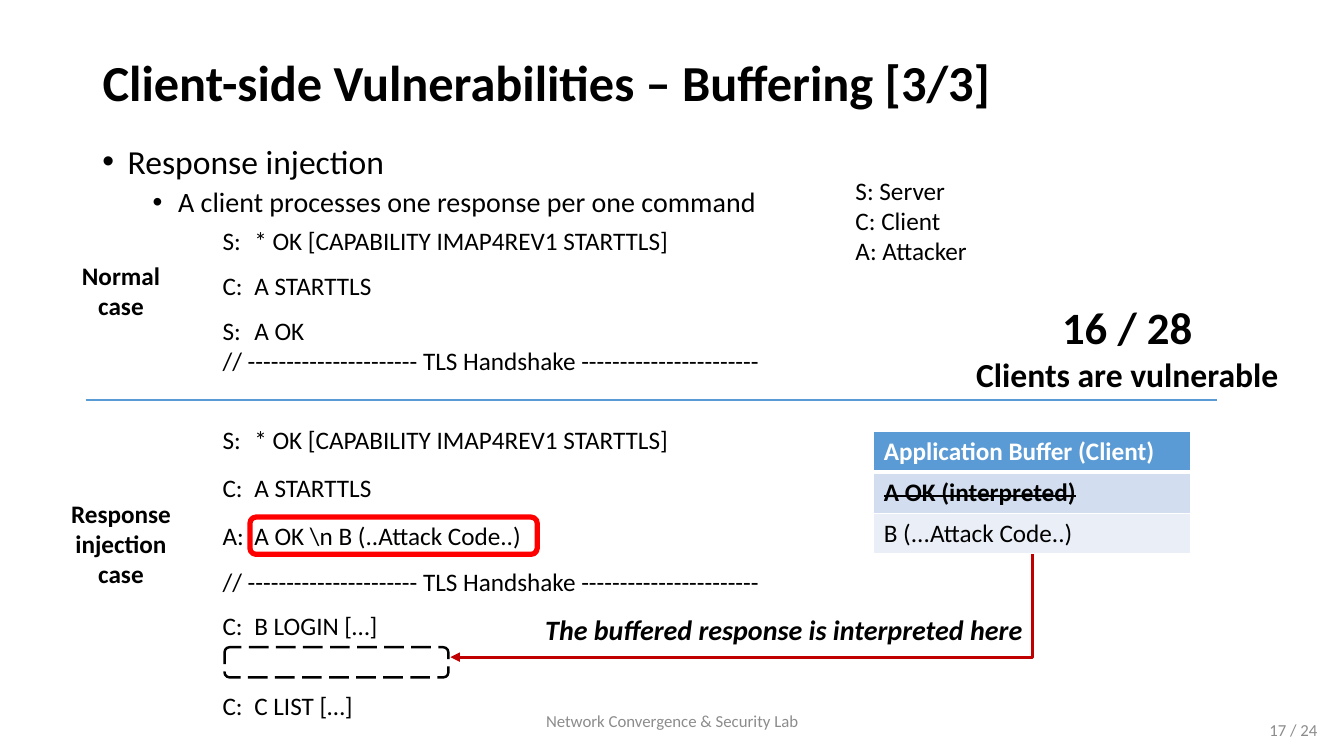
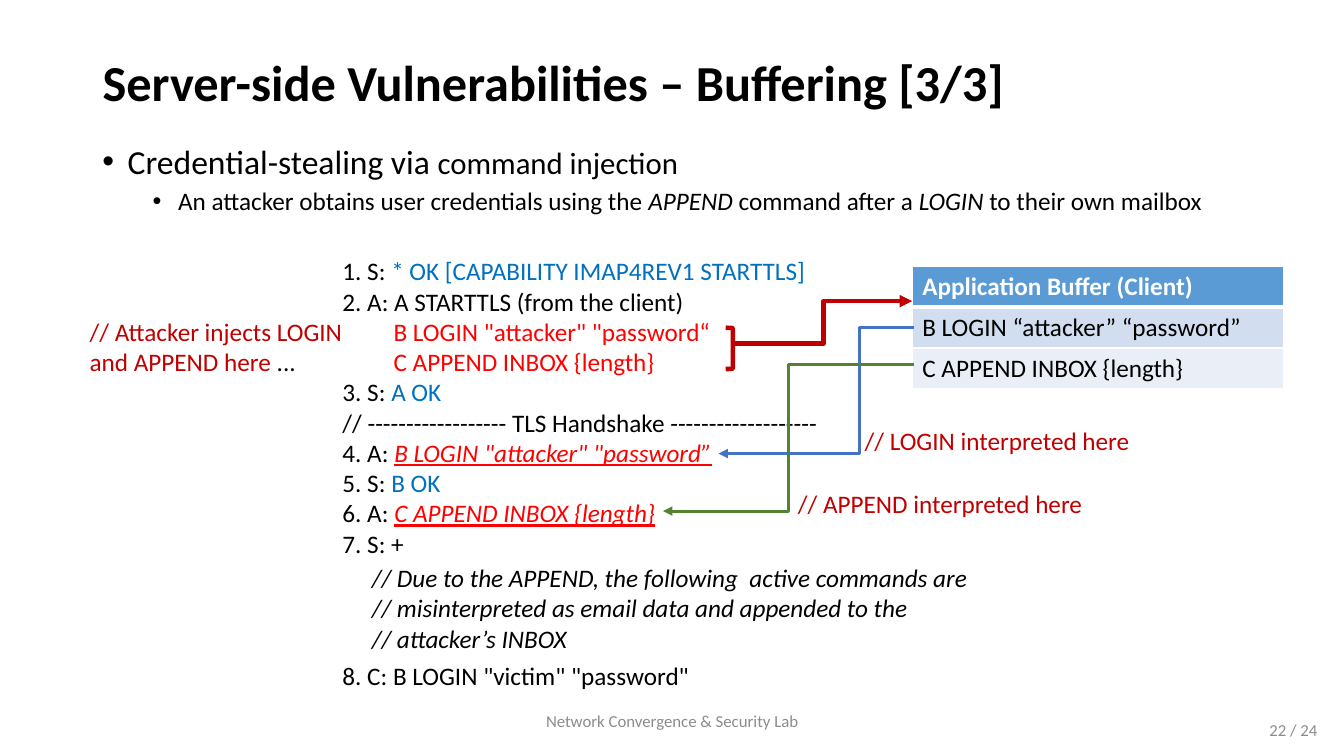
from lxml import etree
from pptx import Presentation
from pptx.dml.color import RGBColor
from pptx.enum.dml import MSO_LINE
from pptx.enum.shapes import MSO_CONNECTOR, MSO_SHAPE
from pptx.enum.text import MSO_ANCHOR, MSO_AUTO_SIZE, PP_ALIGN
from pptx.oxml.ns import qn
from pptx.util import Cm, Pt

FONT = "Calibri"
COLORS = {
    "black": "000000", "white": "FFFFFF", "gray": "8C8C8C",
    "red": "FF0000", "dark_red": "C00000", "text_blue": "0070C0",
    "arrow_blue": "4472C4", "green": "548235", "header": "5B9BD5",
    "band_dark": "D2DEEF", "band_light": "EAEFF7",
}
FOOTER = "Network Convergence & Security Lab"
PAGE_COUNT = 24
TITLE_BOX = (2.33, 1.01, 29.21, 2.25)
BODY_BOX = (2.33, 3.53, 29.21, 13.23)
FOOTER_BOX = (11.23, 17.65, 11.43, 1.01)
PAGE_BOX = (25.83, 17.88, 7.62, 1.01)
ROW_HEIGHT = 1.03
TAG_INDENT = 0.8
INJECT_INDENT = 1.29


def para(*runs, **layout):
    """Pair runs, each a string or (string, style), with paragraph layout."""
    return runs, layout


def tagged(text, before=0):
    """A protocol line whose text after the tab hangs at a fixed indent."""
    return para(text, before=before, indent=TAG_INDENT, hang=TAG_INDENT)


def bullet(*runs, indent, before):
    return para(*runs, indent=indent, hang=0.64, before=before, spacing=0.9, bullet=True)


BLUE = {"color": "text_blue"}
RED = {"color": "red"}
INJECTED = {"color": "red", "italic": True, "underline": True}
ITALIC = {"italic": True, "size": 18}
SMALL = {"size": 18}

GREETING = "S:\t* OK [CAPABILITY IMAP4REV1 STARTTLS]"
HANDSHAKE = "// ---------------------- TLS Handshake -----------------------"

CLIENT = {
    "title": "Client-side Vulnerabilities – Buffering [3/3]",
    "page": 17,
    "body": [
        bullet(("Response injection", {"size": 24}), indent=0.64, before=10),
        bullet(("A client processes one response per one command", {"size": 20}),
               indent=1.91, before=5),
    ],
    "texts": [
        ((22.96, 7.44, 10.9, 2.64),
         [para(("16 / 28", {"size": 32})), para("Clients are vulnerable")],
         {"size": 24, "bold": True, "align": PP_ALIGN.CENTER}),
        ((5.36, 5.56, 15.01, 4.45),
         [tagged(GREETING), tagged("C:\tA STARTTLS", 10),
          tagged("S:\tA OK", 11), tagged(HANDSHAKE)], {}),
        ((5.36, 10.57, 15.01, 7.77),
         [tagged(GREETING), tagged("C:\tA STARTTLS", 12.8),
          tagged("A:\tA OK \\n B (..Attack Code..)", 12.8), tagged(HANDSHAKE, 11),
          tagged("C:\tB LOGIN […]", 10), tagged("C:\tC LIST […]", 35.4)], {}),
        ((13.49, 15.31, 13.67, 1.11),
         [para("The buffered response is interpreted here")],
         {"size": 20, "bold": True, "italic": True}),
        ((21.31, 4.29, 3.51, 2.57),
         [para("S: Server"), para("C: Client"), para("A: Attacker")], {}),
        ((1.17, 6.43, 3.76, 1.8), [para("Normal"), para("case")],
         {"bold": True, "align": PP_ALIGN.CENTER}),
        ((1.17, 12.42, 3.76, 2.57),
         [para("Response"), para("injection"), para("case")],
         {"bold": True, "align": PP_ALIGN.CENTER}),
    ],
    "buffer": ((22.02, 10.87, 7.98),
               [("A OK (interpreted)", {"bold": True, "strike": True}),
                "B (...Attack Code..)"]),
}

SERVER = {
    "title": "Server-side Vulnerabilities – Buffering [3/3]",
    "page": 22,
    "body": [
        bullet(("Credential-stealing via ", {"size": 24}),
               ("command injection", {"size": 22}), indent=0.64, before=10),
        bullet(("An attacker obtains user credentials using the ", SMALL),
               ("APPEND", ITALIC), (" command after a ", SMALL), ("LOGIN", ITALIC),
               (" to their own mailbox", SMALL), indent=1.91, before=5),
    ],
    "texts": [
        ((8.38, 6.32, 21.16, 11.28), [
            para("1. S: ", ("* OK [CAPABILITY IMAP4REV1 STARTTLS]", BLUE)),
            para("2. A: A STARTTLS (from the client)"),
            para(('B LOGIN "attacker" "password“', RED), indent=INJECT_INDENT),
            para(("C APPEND INBOX {length}", RED), indent=INJECT_INDENT),
            para("3. S: ", ("A OK", BLUE)),
            para("// ------------------ TLS Handshake -------------------"),
            para("4. A: ", ('B LOGIN "attacker" "password”', INJECTED)),
            para("5. S: ", ("B OK", BLUE)),
            para("6. A: ", ("C APPEND INBOX {length}", INJECTED)),
            para("7. S: +"),
            para('8. C: B LOGIN "victim" "password"', before=73),
        ], {}),
        ((2.01, 7.85, 7.16, 1.8),
         [para("// Attacker injects LOGIN and APPEND here ", ("...", {"color": "black"}))],
         {"color": "dark_red"}),
        ((21.54, 10.59, 8.36, 1.01), [para("// LOGIN interpreted here")],
         {"color": "dark_red"}),
        ((19.86, 12.19, 8.36, 1.01), [para("// APPEND interpreted here")],
         {"color": "dark_red"}),
        ((9.12, 14.05, 17.35, 2.57),
         [para("// Due to the APPEND, the following  active commands are"),
          para("// misinterpreted as email data and appended to the"),
          para("// attacker’s INBOX")], {"italic": True}),
    ],
    "buffer": ((22.99, 6.71, 9.35),
               ["B LOGIN “attacker” “password”", "C APPEND INBOX {length}"]),
}


def rgb(name):
    return RGBColor.from_string(COLORS[name])


def cms(values):
    return [Cm(v) for v in values]


def add_run(p, text, size=18, color="black", bold=False, italic=False,
            underline=False, strike=False):
    r = p.add_run()
    r.text = text
    font = r.font
    font.name, font.size = FONT, Pt(size)
    font.bold, font.italic, font.underline = bold, italic, underline
    font.color.rgb = rgb(color)
    if strike:
        r._r.get_or_add_rPr().set("strike", "sngStrike")


def fill_paragraph(p, runs, style, before=0, spacing=1.0, indent=0, hang=0, bullet=False):
    p.space_before, p.line_spacing = Pt(before), spacing
    pPr = p._p.get_or_add_pPr()
    pPr.set("marL", str(Cm(indent)))
    pPr.set("indent", str(-Cm(hang)))
    if bullet:
        etree.SubElement(pPr, qn("a:buFont")).set("typeface", "Arial")
        etree.SubElement(pPr, qn("a:buChar")).set("char", "•")
    for run in runs:
        text, own = (run, {}) if isinstance(run, str) else run
        add_run(p, text, **{**style, **own})


def add_text(slide, box, paras, align=PP_ALIGN.LEFT, anchor=MSO_ANCHOR.TOP, **style):
    tf = slide.shapes.add_textbox(*cms(box)).text_frame
    tf.word_wrap, tf.vertical_anchor = True, anchor
    for i, (runs, layout) in enumerate(paras):
        p = tf.add_paragraph() if i else tf.paragraphs[0]
        p.alignment = align
        fill_paragraph(p, runs, style, **layout)


def set_title(slide, text):
    sp = slide.shapes.title
    sp.left, sp.top, sp.width, sp.height = cms(TITLE_BOX)
    tf = sp.text_frame
    tf.auto_size, tf.word_wrap = MSO_AUTO_SIZE.NONE, True
    tf.vertical_anchor = MSO_ANCHOR.MIDDLE
    p = tf.paragraphs[0]
    p.alignment, p.line_spacing = PP_ALIGN.LEFT, 0.9
    add_run(p, text, size=36, bold=True)


def set_borders(cell, bottom):
    tcPr = cell._tc.get_or_add_tcPr()
    for side, width in (("L", 1), ("R", 1), ("T", 1), ("B", bottom)):
        ln = etree.SubElement(tcPr, qn(f"a:ln{side}"), w=str(Pt(width)))
        fill = etree.SubElement(ln, qn("a:solidFill"))
        etree.SubElement(fill, qn("a:srgbClr"), val=COLORS["white"])


def add_buffer_table(slide, place, entries):
    left, top, width = place
    rows = [("Application Buffer (Client)", {"bold": True, "color": "white"}), *entries]
    table = slide.shapes.add_table(
        len(rows), 1, *cms((left, top, width, ROW_HEIGHT * len(rows)))).table
    for i, (run, fill) in enumerate(zip(rows, ("header", "band_dark", "band_light"))):
        table.rows[i].height = Cm(ROW_HEIGHT)
        cell = table.cell(i, 0)
        set_borders(cell, bottom=1 if i else 3)
        cell.fill.solid()
        cell.fill.fore_color.rgb = rgb(fill)
        fill_paragraph(cell.text_frame.paragraphs[0], [run], {})


def add_line(slide, kind, start, end, color, width, arrow=False):
    cxn = slide.shapes.add_connector(kind, *cms((*start, *end)))
    cxn.line.color.rgb, cxn.line.width = rgb(color), Pt(width)
    if arrow:
        etree.SubElement(cxn.line._get_or_add_ln(), qn("a:tailEnd"), type="triangle")
    etree.SubElement(cxn._element.spPr, qn("a:effectLst"))
    return cxn


def add_elbow(slide, start, end, color, width, bend=0.5):
    """Arrow that leaves sideways and turns at the share bend of its run."""
    cxn = add_line(slide, MSO_CONNECTOR.ELBOW, start, end, color, width, arrow=True)
    av = cxn._element.spPr.find(qn("a:prstGeom")).get_or_add_avLst()
    etree.SubElement(av, qn("a:gd"), name="adj1", fmla=f"val {round(bend * 100000)}")


def add_corner(slide, start, end, color, width):
    """Arrow that goes down, then left: a one-bend connector turned by 90 degrees."""
    (x1, y1), (x2, y2) = start, end
    cx, cy = (x1 + x2) / 2, (y1 + y2) / 2
    half_w, half_h = (y2 - y1) / 2, (x1 - x2) / 2
    cxn = add_line(slide, MSO_CONNECTOR.ELBOW, (cx - half_w, cy - half_h),
                   (cx + half_w, cy + half_h), color, width, arrow=True)
    spPr = cxn._element.spPr
    spPr.find(qn("a:prstGeom")).set("prst", "bentConnector2")
    spPr.find(qn("a:xfrm")).set("rot", "5400000")


def add_outline(slide, kind, box, color, width, dash=None):
    sp = slide.shapes.add_shape(kind, *cms(box))
    sp.shadow.inherit = False
    sp.fill.background()
    sp.line.color.rgb, sp.line.width = rgb(color), Pt(width)
    if dash:
        sp.line.dash_style = dash


def add_slide(prs, content):
    slide = prs.slides.add_slide(prs.slide_layouts[5])
    set_title(slide, content["title"])
    add_text(slide, BODY_BOX, content["body"])
    for box, paras, style in content["texts"]:
        add_text(slide, box, paras, **style)
    add_buffer_table(slide, *content["buffer"])
    small = {"size": 12, "color": "gray", "anchor": MSO_ANCHOR.MIDDLE}
    add_text(slide, FOOTER_BOX, [para(FOOTER)], align=PP_ALIGN.CENTER, **small)
    add_text(slide, PAGE_BOX, [para(f"{content['page']} / {PAGE_COUNT}")],
             align=PP_ALIGN.RIGHT, **small)
    return slide


def main():
    prs = Presentation()
    prs.slide_width, prs.slide_height = Cm(33.87), Cm(19.05)

    client = add_slide(prs, CLIENT)
    add_corner(client, (26.01, 13.97), (11.35, 16.56), "dark_red", 2.25)
    add_outline(client, MSO_SHAPE.ROUNDED_RECTANGLE, (6.3, 13.03, 7.24, 0.94), "red", 3.75)
    add_outline(client, MSO_SHAPE.ROUNDED_RECTANGLE, (5.66, 16.31, 5.64, 0.76),
                "black", 1.75, MSO_LINE.LONG_DASH)
    add_line(client, MSO_CONNECTOR.STRAIGHT, (2.16, 10.08), (30.68, 10.08), "header", 1.5)

    server = add_slide(prs, SERVER)
    add_outline(server, MSO_SHAPE.RIGHT_BRACKET, (18.29, 8.26, 0.18, 1.04), "dark_red", 3.25)
    add_elbow(server, (18.52, 8.66), (22.99, 7.59), "dark_red", 3)
    add_elbow(server, (23.04, 8.26), (18.11, 11.43), "arrow_blue", 2.25, bend=0.28)
    add_elbow(server, (23.04, 9.19), (16.71, 12.88), "green", 2.25)

    prs.save("out.pptx")


if __name__ == "__main__":
    main()
